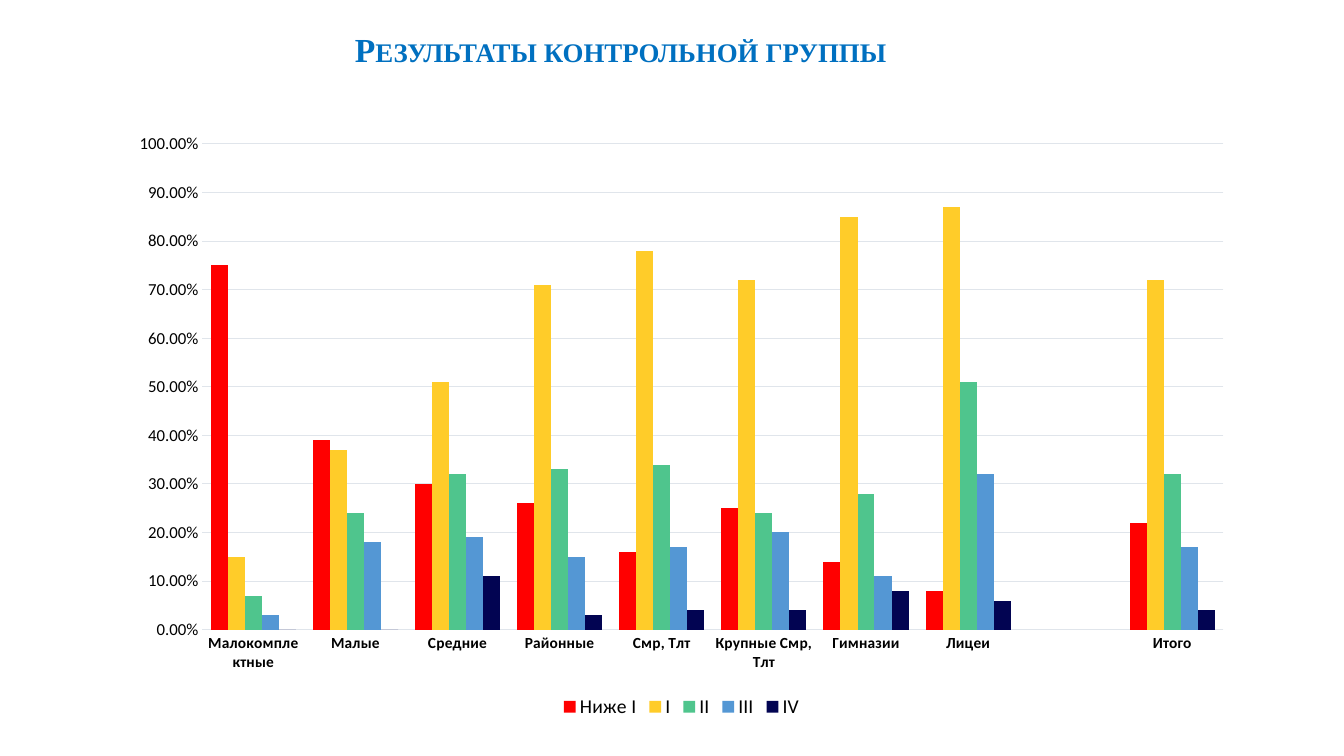
from dataclasses import dataclass

from pptx import Presentation
from pptx.chart.data import CategoryChartData
from pptx.dml.color import RGBColor
from pptx.enum.chart import XL_CHART_TYPE as ChartType, XL_LEGEND_POSITION as LegendPosition
from pptx.enum.chart import XL_TICK_MARK as TickMark
from pptx.enum.text import MSO_ANCHOR as Anchor, MSO_AUTO_SIZE as AutoSize, PP_ALIGN as Align
from pptx.util import Emu, Pt

PX_PER_INCH = 100.8

SCHOOL_TYPES = [
    "Малокомплектные", "Малые", "Средние", "Районные", "Смр, Тлт",
    "Крупные Смр, Тлт", "Гимназии", "Лицеи", "", "Итого",
]
LEVELS = {
    "Ниже I": (0.75, 0.39, 0.30, 0.26, 0.16, 0.25, 0.14, 0.08, None, 0.22),
    "I": (0.15, 0.37, 0.51, 0.71, 0.78, 0.72, 0.85, 0.87, None, 0.72),
    "II": (0.07, 0.24, 0.32, 0.33, 0.34, 0.24, 0.28, 0.51, None, 0.32),
    "III": (0.03, 0.18, 0.19, 0.15, 0.17, 0.20, 0.11, 0.32, None, 0.17),
    "IV": (0, 0, 0.11, 0.03, 0.04, 0.04, 0.08, 0.06, None, 0.04),
}


@dataclass(frozen=True)
class Theme:
    title_font: str = "Times New Roman"
    chart_font: str = "Calibri"
    title_color: str = "0070C0"
    text_color: str = "000000"
    grid_color: str = "E0E5EB"
    level_colors: tuple = ("FF0000", "FFCC29", "4FC58D", "5497D4", "020452")
    title_size: int = 24
    chart_size: int = 10
    category_size: int = 11
    value_size: int = 12
    legend_size: int = 14
    line_width: float = 0.75


def px(length):
    return Emu(round(length * 914400 / PX_PER_INCH))


class SlideBuilder:
    """Adds styled elements to one slide."""

    def __init__(self, slide, theme):
        self.slide = slide
        self.theme = theme

    def set_font(self, font, name, size, color, bold=False):
        font.name = name
        font.size = Pt(size)
        font.bold = bold
        font.color.rgb = RGBColor.from_string(color)

    def set_chart_font(self, font, size, bold=False):
        self.set_font(font, self.theme.chart_font, size, self.theme.text_color, bold)

    def set_line(self, line):
        line.width = Pt(self.theme.line_width)
        line.color.rgb = RGBColor.from_string(self.theme.grid_color)

    def title(self, text, left, top, width, height):
        theme = self.theme
        shape = self.slide.shapes.title
        shape.left, shape.top, shape.width, shape.height = map(px, (left, top, width, height))
        frame = shape.text_frame
        frame.text = text
        frame.word_wrap = True
        frame.auto_size = AutoSize.SHAPE_TO_FIT_TEXT
        frame.vertical_anchor = Anchor.MIDDLE
        frame.margin_left = frame.margin_right = px(11)
        frame.margin_top = frame.margin_bottom = px(6)
        paragraph = frame.paragraphs[0]
        paragraph.alignment = Align.LEFT
        paragraph.line_spacing = 0.9
        self.set_font(paragraph.font, theme.title_font, theme.title_size, theme.title_color, True)
        paragraph.font._element.set("cap", "small")

    def column_chart(self, categories, series_values, left, top, width, height):
        theme = self.theme
        data = CategoryChartData(number_format="0.00%")
        data.categories = categories
        for name, values in series_values.items():
            data.add_series(name, values)
        chart = self.slide.shapes.add_chart(
            ChartType.COLUMN_CLUSTERED, *map(px, (left, top, width, height)), data
        ).chart
        chart.has_title = False
        self.set_chart_font(chart.font, theme.chart_size)

        plot = chart.plots[0]
        plot.gap_width = 100
        plot.overlap = 0
        plot.vary_by_categories = False
        for series, color in zip(plot.series, theme.level_colors):
            series.invert_if_negative = False
            series.format.fill.solid()
            series.format.fill.fore_color.rgb = RGBColor.from_string(color)

        category_axis, value_axis = chart.category_axis, chart.value_axis
        for axis in (category_axis, value_axis):
            axis.major_tick_mark = axis.minor_tick_mark = TickMark.NONE
        self.set_chart_font(category_axis.tick_labels.font, theme.category_size, True)
        self.set_line(category_axis.format.line)

        value_axis.minimum_scale, value_axis.maximum_scale = 0, 1
        value_axis.major_unit = 0.1
        value_axis.tick_labels.number_format = "0.00%"
        value_axis.tick_labels.number_format_is_linked = False
        self.set_chart_font(value_axis.tick_labels.font, theme.value_size)
        value_axis.format.line.fill.background()
        self.set_line(value_axis.major_gridlines.format.line)

        chart.has_legend = True
        chart.legend.position = LegendPosition.BOTTOM
        chart.legend.include_in_layout = False
        self.set_chart_font(chart.legend.font, theme.legend_size)


def main():
    presentation = Presentation()
    presentation.slide_width = px(1344)
    presentation.slide_height = px(756)
    slide = presentation.slides.add_slide(presentation.slide_layouts[5])
    builder = SlideBuilder(slide, Theme())
    builder.title("Результаты контрольной группы", 344, 28, 901, 48)
    builder.column_chart(SCHOOL_TYPES, LEVELS, 117, 122, 1129, 601)
    presentation.save("out.pptx")


if __name__ == "__main__":
    main()
